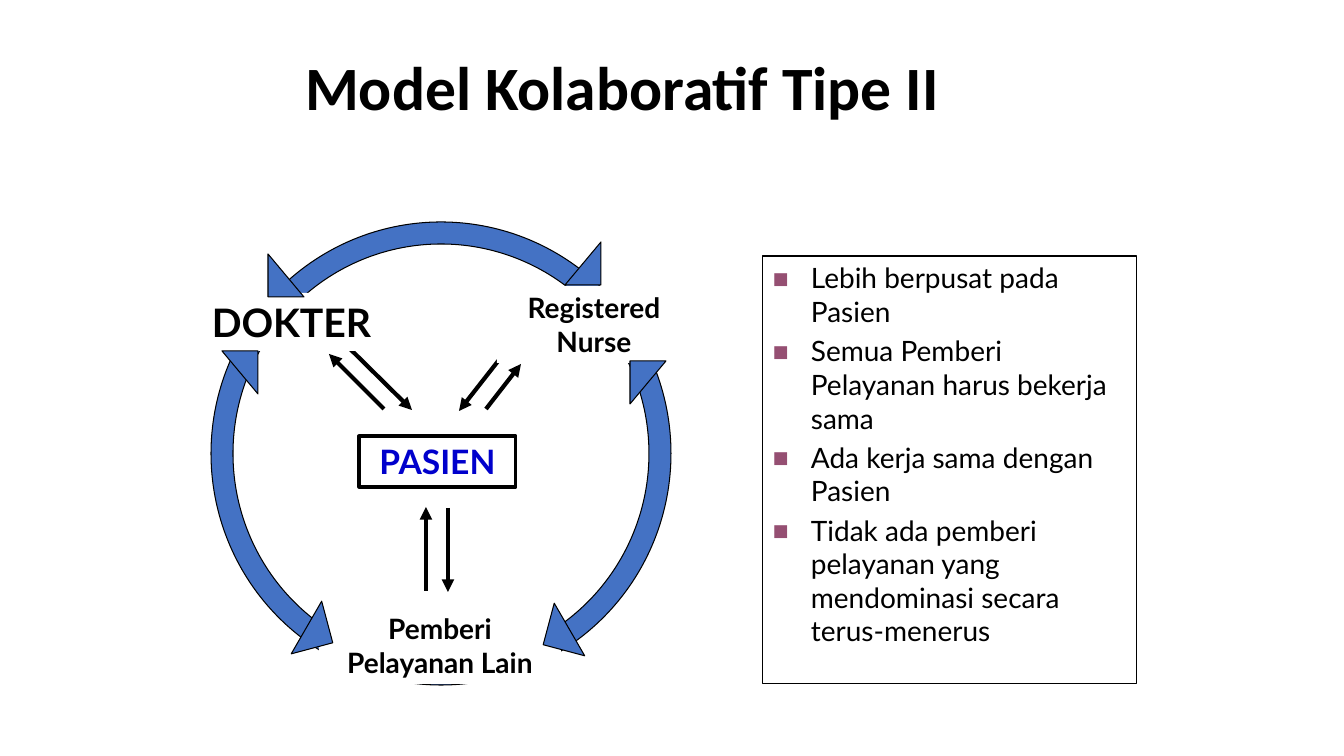
import pptx
import pptx.util
import pptx.dml.color
import pptx.enum.shapes
import pptx.enum.text
import pptx.oxml
import pptx.oxml.ns
from dataclasses import dataclass

Form = pptx.enum.shapes.MSO_SHAPE
Align = pptx.enum.text.PP_ALIGN
Anchor = pptx.enum.text.MSO_ANCHOR
Pt = pptx.util.Pt


@dataclass(frozen=True)
class Theme:
    black: str = "000000"
    white: str = "FFFFFF"
    blue: str = "4472C4"
    ink: str = "0000CC"
    plum: str = "954F72"
    head: str = "Calibri"
    body: str = "Lato"
    title: int = 44
    large: int = 28
    mid: int = 24
    small: int = 20
    thin: float = 0.75
    frame: float = 2.25
    thick: float = 3


theme = Theme()
title = ("Model Kolaboratif Tipe II", (295, 23, 859, 136))
patient = ("PASIEN", (359, 436, 157, 51), theme.mid)
labels = [
    ("DOKTER", (188, 293, 207, 58), theme.large),
    ("Pemberi Pelayanan Lain", (319, 607, 242, 77), theme.small),
    ("Registered Nurse", (497, 286, 194, 77), theme.small),
]
points = [
    "Lebih berpusat pada Pasien",
    "Semua Pemberi Pelayanan harus bekerja sama",
    "Ada kerja sama dengan Pasien",
    "Tidak ada pemberi pelayanan yang mendominasi secara terus-menerus",
]
panel = (763, 256, 374, 428)
indent = 38
ring = (211, 222, 460, 463)
band = 22
arrows = [
    (336, 335, 412, 410),
    (384, 409, 329, 354),
    (517, 337, 459, 411),
    (486, 409, 521, 364),
    (426, 591, 426, 507),
    (448, 508, 448, 592),
]
tips = [
    ((548, 608, 43, 43), 14.9, ""),
    ((268, 254, 36, 43), 0, ""),
    ((565, 242, 36, 43), 0, "H"),
    ((285, 606, 43, 43), 345.1, "H"),
    ((222, 351, 36, 43), 0, "HV"),
    ((630, 361, 36, 43), 0, "V"),
]


def px(n):
    return round(n * 914400 / 100.8)


def rgb(code):
    return pptx.dml.color.RGBColor.from_string(code)


def style(para, font, size, color, bold=False):
    for run in para.runs:
        run.font.name = font
        run.font.size = Pt(size)
        run.font.color.rgb = rgb(color)
        run.font.bold = bold


def shape(kind, box, fill=None, line=None):
    item = slide.shapes.add_shape(kind, *map(px, box))
    item.shadow.inherit = False
    if fill:
        item.fill.solid()
        item.fill.fore_color.rgb = rgb(fill)
    else:
        item.fill.background()
    if line:
        item.line.color.rgb = rgb(theme.black)
        item.line.width = Pt(line)
    else:
        item.line.fill.background()
    return item


def label(text, box, size, color=theme.black, line=None):
    frame = shape(Form.RECTANGLE, box, theme.white, line).text_frame
    frame.text = text
    frame.word_wrap = True
    frame.vertical_anchor = Anchor.TOP
    frame.paragraphs[0].alignment = Align.CENTER
    style(frame.paragraphs[0], theme.body, size, color, True)


def node(tag, **attrs):
    item = pptx.oxml.parse_xml(f"<a:{tag} {pptx.oxml.ns.nsdecls('a')}/>")
    for key, value in attrs.items():
        item.set(key, value)
    return item


def arrow(ends):
    link = slide.shapes.add_connector(
        pptx.enum.shapes.MSO_CONNECTOR.STRAIGHT, *map(px, ends))
    link.line.color.rgb = rgb(theme.black)
    link.line.width = Pt(theme.thick)
    link.line._get_or_add_ln().append(node("tailEnd", type="triangle"))
    link._element.spPr.append(node("effectLst"))


def bullets():
    frame = shape(Form.RECTANGLE, panel, line=theme.thin).text_frame
    frame.text = "\n".join(points)
    frame.word_wrap = True
    frame.vertical_anchor = Anchor.TOP
    for para in frame.paragraphs:
        para.alignment = Align.LEFT
        para.space_before = Pt(theme.small * 0.2)
        style(para, theme.body, theme.small, theme.black)
        props = para._p.get_or_add_pPr()
        props.set("marL", str(px(indent)))
        props.set("indent", str(-px(indent)))
        tint = node("buClr")
        tint.append(node("srgbClr", val=theme.plum))
        props.extend([tint, node("buSzPct", val="60000"),
                      node("buFont", typeface=theme.body),
                      node("buChar", char="■")])


def tip(box, turn, flip):
    item = shape(Form.RIGHT_TRIANGLE, box, theme.blue, theme.thin)
    item.rotation = turn
    for axis in flip:
        item._element.spPr.xfrm.set("flip" + axis, "1")


deck = pptx.Presentation()
deck.slide_width, deck.slide_height = px(1344), px(756)
slide = deck.slides.add_slide(deck.slide_layouts[5])

top = slide.shapes.title
top.left, top.top, top.width, top.height = map(px, title[1])
top.text_frame.text = title[0]
top.text_frame.word_wrap = True
top.text_frame.vertical_anchor = Anchor.MIDDLE
lead = top.text_frame.paragraphs[0]
lead.alignment = Align.LEFT
lead.line_spacing = 0.9
style(lead, theme.head, theme.title, theme.black, True)

label(*patient, theme.ink, theme.frame)
for ends in arrows:
    arrow(ends)
bullets()
wheel = shape(Form.DONUT, ring, theme.blue, theme.thin)
wheel.adjustments[0] = band / min(ring[2:])
for row in labels:
    label(*row)
for row in tips:
    tip(*row)

deck.save("out.pptx")
